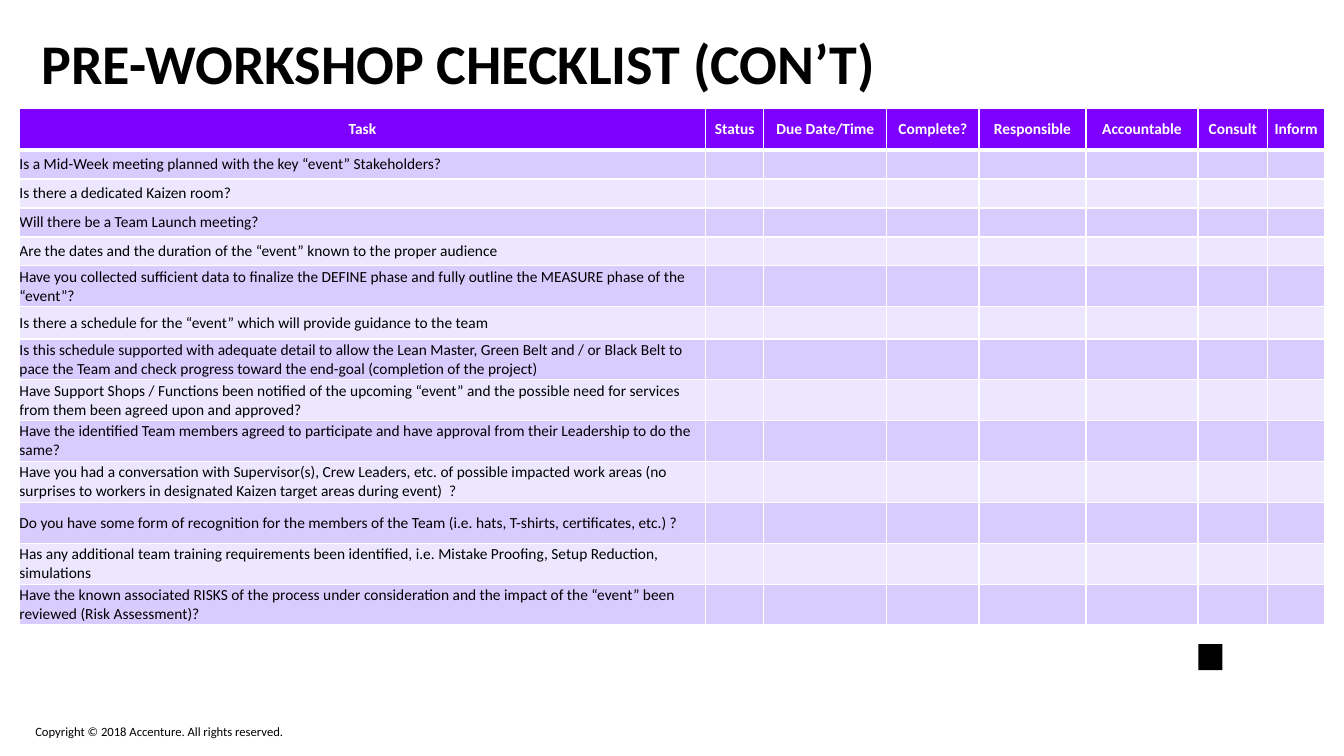
from lxml import etree
from pptx import Presentation
from pptx.dml.color import RGBColor
from pptx.enum.shapes import MSO_SHAPE
from pptx.enum.text import MSO_ANCHOR, MSO_AUTO_SIZE, PP_ALIGN
from pptx.oxml.ns import qn
from pptx.util import Cm, Pt

TOP, MIDDLE = MSO_ANCHOR.TOP, MSO_ANCHOR.MIDDLE
LEFT, CENTER = PP_ALIGN.LEFT, PP_ALIGN.CENTER
NO_FIT = MSO_AUTO_SIZE.NONE
RECTANGLE = MSO_SHAPE.RECTANGLE

THEME = {
    "font": "Calibri",
    "black": RGBColor.from_string("000000"),
    "white": RGBColor.from_string("FFFFFF"),
    "header": RGBColor.from_string("7E00FF"),
    "bands": [RGBColor.from_string("D8CCFF"), RGBColor.from_string("ECE7FF")],
    "title_size": Pt(40),
    "table_size": Pt(11),
    "footer_size": Pt(9),
}

HEADERS = ["Task", "Status", "Due Date/Time", "Complete?",
           "Responsible", "Accountable", "Consult", "Inform"]
COL_WIDTHS = [17.29, 1.47, 3.1, 2.32, 2.7, 2.82, 1.76, 1.43]
HEADER_H, SHORT, MEDIUM, TALL = 1.04, 0.73, 0.81, 1.03
TASKS = [
    ("Is a Mid-Week meeting planned with the key “event” Stakeholders?", SHORT),
    ("Is there a dedicated Kaizen room?", SHORT),
    ("Will there be a Team Launch meeting?", SHORT),
    ("Are the dates and the duration of the “event” known to the proper audience", SHORT),
    ("Have you collected sufficient data to finalize the DEFINE phase and fully "
     "outline the MEASURE phase of the “event”?", TALL),
    ("Is there a schedule for the “event” which will provide guidance to the team", MEDIUM),
    ("Is this schedule supported with adequate detail to allow the Lean Master, "
     "Green Belt and / or Black Belt to pace the Team and check progress toward "
     "the end-goal (completion of the project)", TALL),
    ("Have Support Shops / Functions been notified of the upcoming “event” and the "
     "possible need for services from them been agreed upon and approved?", TALL),
    ("Have the identified Team members agreed to participate and have approval "
     "from their Leadership to do the same?", TALL),
    ("Have you had a conversation with Supervisor(s), Crew Leaders, etc. of possible "
     "impacted work areas (no surprises to workers in designated Kaizen target areas "
     "during event)  ?", TALL),
    ("Do you have some form of recognition for the members of the Team "
     "(i.e. hats, T-shirts, certificates, etc.) ?", TALL),
    ("Has any additional team training requirements been identified, "
     "i.e. Mistake Proofing, Setup Reduction, simulations", TALL),
    ("Have the known associated RISKS of the process under consideration and the "
     "impact of the “event” been reviewed (Risk Assessment)?", TALL),
]


def write(p, text, size, color, bold=False, align=LEFT):
    p.alignment = align
    r = p.add_run()
    r.text = text
    r.font.color.rgb = color
    for name, value in {"name": THEME["font"], "size": size, "bold": bold}.items():
        setattr(r.font, name, value)


def add_borders(cell, widths):
    tc_pr = cell._tc.get_or_add_tcPr()
    for side, width in widths.items():
        ln = etree.SubElement(tc_pr, qn(f"a:ln{side}"), w=str(Pt(width)))
        fill = etree.SubElement(ln, qn("a:solidFill"))
        etree.SubElement(fill, qn("a:srgbClr"), val=str(THEME["white"]))


prs = Presentation()
prs.slide_width, prs.slide_height = Cm(33.87), Cm(19.05)
s = prs.slides.add_slide(prs.slide_layouts[5])

title = s.shapes.title
for name, value in {"left": 1.05, "top": 1.05, "width": 31.75, "height": 3.61}.items():
    setattr(title, name, Cm(value))
tf = title.text_frame
for name, value in {"margin_left": 0, "margin_top": Cm(0.13), "margin_right": 0,
                    "margin_bottom": 0, "vertical_anchor": TOP,
                    "word_wrap": True, "auto_size": NO_FIT}.items():
    setattr(tf, name, value)
p = tf.paragraphs[0]
p.line_spacing = 0.7
write(p, "PRE-WORKSHOP CHECKLIST (CON’T)", THEME["title_size"], THEME["black"], bold=True)

heights = [HEADER_H] + [height for _, height in TASKS]
table = s.shapes.add_table(len(heights), len(HEADERS), Cm(0.49), Cm(2.74),
                           Cm(sum(COL_WIDTHS)), Cm(sum(heights))).table
for column, width in zip(table.columns, COL_WIDTHS):
    column.width = Cm(width)
for row, height in zip(table.rows, heights):
    row.height = Cm(height)

rows = [HEADERS] + [[task] + [""] * (len(HEADERS) - 1) for task, _ in TASKS]
for i, texts in enumerate(rows):
    is_header = i == 0
    for j, text in enumerate(texts):
        cell = table.cell(i, j)
        for name, value in {"margin_left": 0, "margin_top": 0, "margin_right": 0,
                            "margin_bottom": 0, "vertical_anchor": MIDDLE}.items():
            setattr(cell, name, value)
        add_borders(cell, {"L": 1, "R": 1, "T": 3 if i == 1 else 1, "B": 3 if is_header else 1})
        cell.fill.solid()
        cell.fill.fore_color.rgb = THEME["header"] if is_header else THEME["bands"][(i - 1) % 2]
        p = cell.text_frame.paragraphs[0]
        if text:
            write(p, text, THEME["table_size"], THEME["white" if is_header else "black"],
                  is_header, CENTER if is_header else LEFT)
        else:
            etree.SubElement(p._p, qn("a:endParaRPr"), sz=str(int(THEME["table_size"].pt * 100)))

mark = s.shapes.add_shape(RECTANGLE, Cm(30.2), Cm(16.23), Cm(0.61), Cm(0.66))
mark.shadow.inherit = False
mark.fill.solid()
mark.fill.fore_color.rgb = THEME["black"]
mark.line.fill.background()

tf = s.shapes.add_textbox(Cm(0.64), Cm(18.11), Cm(11.43), Cm(0.38)).text_frame
tf.word_wrap = True
write(tf.paragraphs[0], "Copyright © 2018 Accenture. All rights reserved.",
      THEME["footer_size"], THEME["black"])

prs.save("out.pptx")
